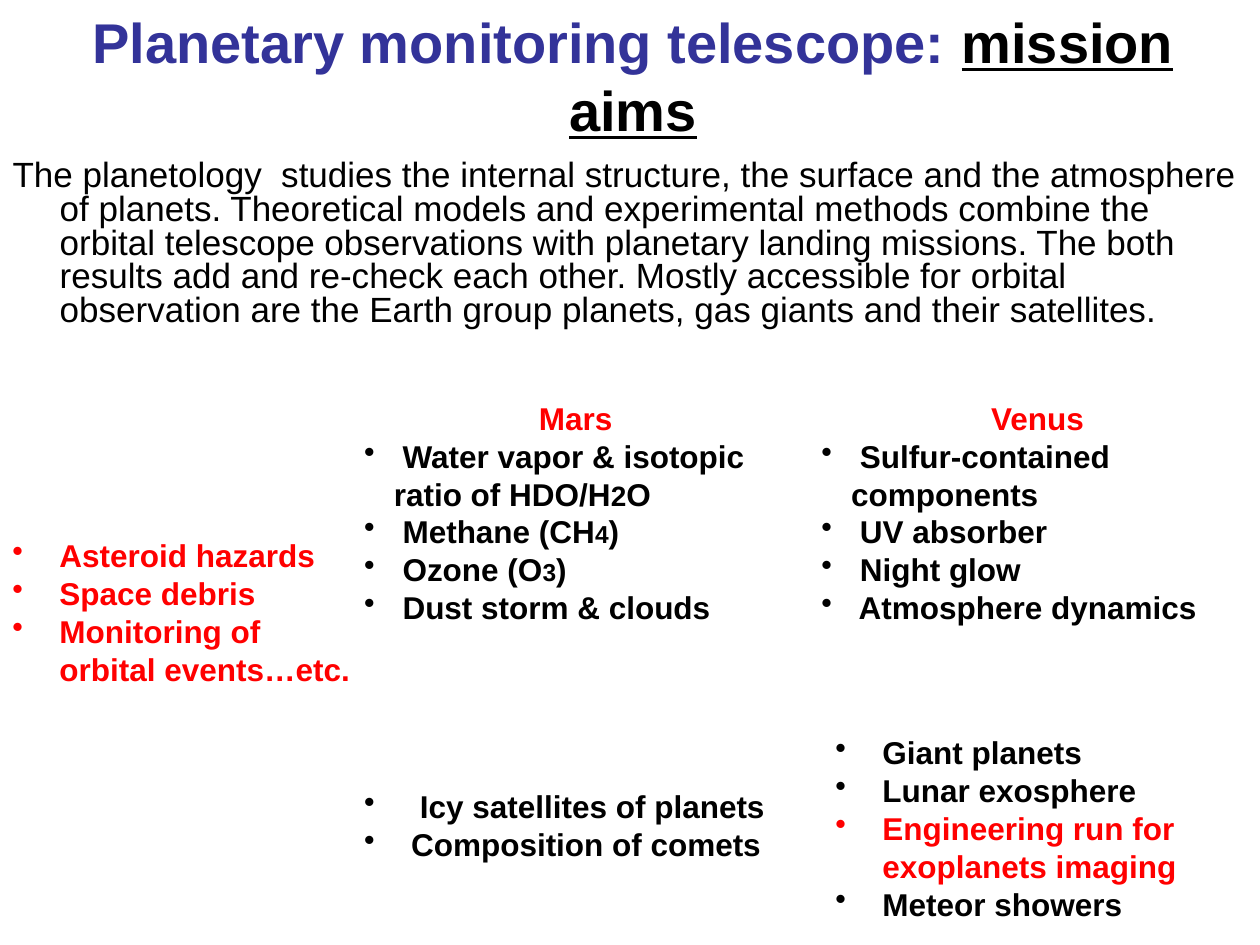
import pptx
import pptx.dml.color
import pptx.enum.text
import pptx.oxml.ns
import pptx.util
from lxml import etree

Cm = pptx.util.Cm
Pt = pptx.util.Pt
ALIGN = pptx.enum.text.PP_ALIGN
COLORS = {"paper": "FFFFFF", "ink": "000000", "title": "333399", "accent": "FF0000"}
FONT = "Arial"
WIDE_INDENT, NARROW_INDENT = Cm(0.95), Cm(0.6)


def rgb(name):
    return pptx.dml.color.RGBColor.from_string(COLORS[name])


def set_indent(paragraph, indent, bullet=None):
    """Hanging indent, with a bullet character or none."""
    properties = paragraph._p.get_or_add_pPr()
    properties.set("marL", str(indent))
    properties.set("indent", str(-indent))
    tag = "a:buChar" if bullet else "a:buNone"
    mark = etree.SubElement(properties, pptx.oxml.ns.qn(tag))
    if bullet:
        mark.set("char", bullet)


def set_font(font, size, color, bold=True):
    font.name = FONT
    font.size = Pt(size)
    font.bold = bold
    font.color.rgb = rgb(color)


def place(shape, left, top, width, height):
    """Position a box and give it the white ground and top-anchored text."""
    shape.left, shape.top, shape.width, shape.height = map(Cm, (left, top, width, height))
    shape.fill.solid()
    shape.fill.fore_color.rgb = rgb("paper")
    frame = shape.text_frame
    frame.word_wrap = True
    frame.auto_size = pptx.enum.text.MSO_AUTO_SIZE.NONE
    frame.vertical_anchor = pptx.enum.text.MSO_ANCHOR.TOP
    return frame


def fill_title(shape):
    frame = place(shape, 0.2, 0.03, 25.12, 2.95)
    frame.margin_left = frame.margin_right = Cm(0.6)
    heading = frame.paragraphs[0]
    heading.alignment = ALIGN.CENTER
    set_font(heading.font, 32, "title")
    heading.add_run().text = "Planetary monitoring telescope: "
    aims = heading.add_run()
    aims.text = "mission aims"
    aims.font.color.rgb = rgb("ink")
    aims.font.underline = True


def fill_intro(shape, text):
    intro = place(shape, 0, 3.12, 25.4, 3.99).paragraphs[0]
    intro.text = text
    set_indent(intro, WIDE_INDENT)
    intro.line_spacing = 0.8
    intro.space_before = Pt(0)
    set_font(intro.font, 20, "ink", bold=False)


def add_topics(slide, box, topics, indent, heading=None, color="ink", accented=()):
    """Bulleted box; a topic is a string or a list of (text, size) parts."""
    frame = place(slide.shapes.add_textbox(0, 0, 0, 0), *box)
    frame.margin_left = frame.margin_right = Cm(0.05)
    paragraph = frame.paragraphs[0]
    if heading:
        paragraph.text = heading
        paragraph.alignment = ALIGN.CENTER
        set_font(paragraph.font, 18, "accent")
    for number, topic in enumerate(topics):
        if heading or number:
            paragraph = frame.add_paragraph()
        set_indent(paragraph, indent, "•")
        set_font(paragraph.font, 18, "accent" if topic in accented else color)
        parts = [(topic, None)] if isinstance(topic, str) else topic
        for text, size in parts:
            run = paragraph.add_run()
            run.text = text
            if size:
                run.font.size = Pt(size)


def main():
    deck = pptx.Presentation()
    deck.slide_width, deck.slide_height = Cm(25.4), Cm(19.05)
    slide = deck.slides.add_slide(deck.slide_layouts[1])

    # Title and introduction
    fill_title(slide.shapes.title)
    fill_intro(
        slide.placeholders[1],
        "The planetology  studies the internal structure, the surface and the "
        "atmosphere of planets. Theoretical models and experimental methods combine "
        "the orbital telescope observations with planetary landing missions. The both "
        "results add and re-check each other. Mostly accessible for orbital "
        "observation are the Earth group planets, gas giants and their satellites.",
    )

    # Planets
    mars = [
        [(" Water vapor & isotopic ratio of HDO/H", None), ("2", 16), ("O", None)],
        [(" Methane (CH", None), ("4", 14), (")", None)],
        [(" Ozone (O", None), ("3", 14), (")", None)],
        " Dust storm & clouds",
    ]
    venus = [" Sulfur-contained components", " UV absorber", " Night glow",
             " Atmosphere dynamics"]
    add_topics(slide, (7.29, 7.92, 8.81, 4.83), mars, NARROW_INDENT, heading="Mars ")
    add_topics(slide, (16.51, 7.92, 8.81, 4.83), venus, NARROW_INDENT, heading="Venus")

    # Other targets
    add_topics(slide, (7.29, 15.75, 9.19, 1.78),
               [" Icy satellites of planets", "Composition of comets"], WIDE_INDENT)
    exoplanets = "Engineering run for exoplanets imaging"
    add_topics(slide, (16.79, 14.66, 8.61, 4.06),
               ["Giant planets", "Lunar exosphere", exoplanets, "Meteor showers"],
               WIDE_INDENT, accented=(exoplanets,))

    # Near-Earth monitoring
    add_topics(slide, (0.2, 10.69, 6.91, 4.06),
               ["Asteroid hazards", "Space debris", "Monitoring of orbital events…etc."],
               WIDE_INDENT, color="accent")

    deck.save("out.pptx")


if __name__ == "__main__":
    main()
